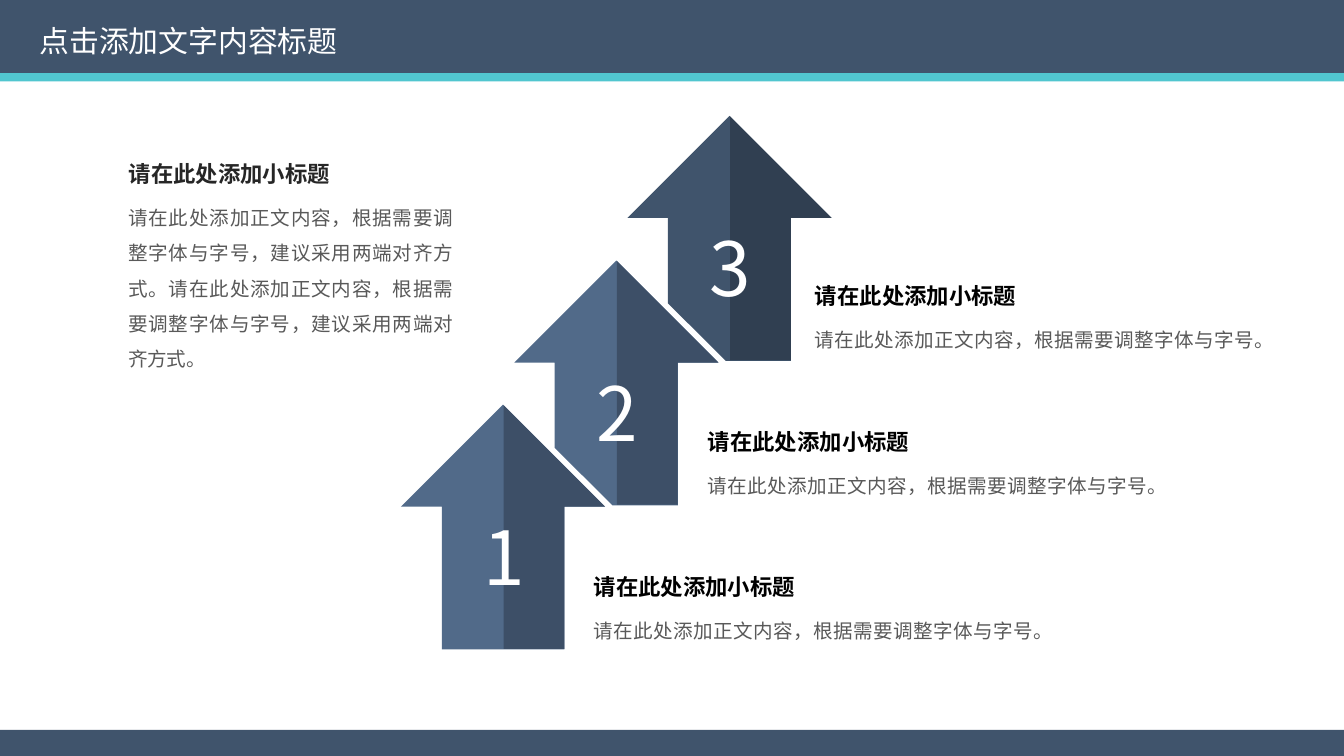
"""Build a slide of three rising arrows with captions."""
from dataclasses import dataclass

from lxml import etree
from pptx import Presentation
from pptx.dml.color import RGBColor
from pptx.enum.shapes import MSO_SHAPE
from pptx.enum.text import MSO_AUTO_SIZE, PP_ALIGN
from pptx.oxml.ns import qn
from pptx.util import Pt

RECT, ARROW = MSO_SHAPE.RECTANGLE, MSO_SHAPE.UP_ARROW
LEFT, CENTER, JUSTIFY = PP_ALIGN.LEFT, PP_ALIGN.CENTER, PP_ALIGN.JUSTIFY
GROW = MSO_AUTO_SIZE.SHAPE_TO_FIT_TEXT

FONT = "Noto Sans CJK SC"
HEX = {
    "slate": "40546C", "teal": "51C6CF", "night": "303F51",
    "blue": "516A89", "navy": "3D4F67", "white": "FFFFFF",
    "black": "000000", "ink": "262626", "gray": "595959",
}
HEAD = "请在此处添加小标题"
LINE = "请在此处添加正文内容，根据需要调整字体与字号"
LONG = f"{LINE}，建议采用两端对齐方式。" * 2

WIDE, TALL, TIP = 109.4, 131.2, 54.7
STEM, SIDE = 21.7, 87.6
NOTCHED = [(TIP, 0), (WIDE, TIP), (SIDE, TIP), (SIDE, TALL),
           (52.7, TALL), (STEM, 100.4), (STEM, TIP), (0, TIP)]
SHADE = [(55, 0.3), (WIDE, TIP), (SIDE, TIP), (SIDE, TALL - 0.4), (55, TALL - 0.4)]


@dataclass
class Step:
    label: str
    left: float
    top: float
    light: str
    dark: str
    note: tuple[float, float]
    notch: bool = True


@dataclass
class Band:
    top: float
    height: float
    color: str


BANDS = [Band(0, 39.4, "slate"), Band(39.2, 4.4, "teal"), Band(391, 14, "slate")]
STEPS = [
    Step("3", 336.1, 62.1, "slate", "night", (429.5, 147.4)),
    Step("2", 275.5, 139.6, "blue", "navy", (372.1, 225.6)),
    Step("1", 214.8, 216.8, "blue", "navy", (311, 303.5), notch=False),
]


def paint(shape, color: str) -> None:
    shape.shadow.inherit = False
    shape.fill.solid()
    shape.fill.fore_color.rgb = RGBColor.from_string(HEX[color])
    shape.line.fill.background()


def block(slide, kind, left: float, top: float, width: float, height: float, color: str):
    shape = slide.shapes.add_shape(kind, Pt(left), Pt(top), Pt(width), Pt(height))
    paint(shape, color)
    return shape


def outline(slide, points: list, left: float, top: float, color: str) -> None:
    spots = [(Pt(left + x), Pt(top + y)) for x, y in points]
    pen = slide.shapes.build_freeform(*spots[0])
    pen.add_line_segments(spots[1:], close=True)
    paint(pen.convert_to_shape(), color)


def write(slide, text: str, left: float, top: float, width: float, height: float, *,
          size: float, color: str, bold: bool = False, align=LEFT,
          space: float = 1, wrap: bool = True) -> None:
    box = slide.shapes.add_textbox(Pt(left), Pt(top), Pt(width), Pt(height))
    frame = box.text_frame
    frame.word_wrap = wrap
    frame.auto_size = GROW
    para = frame.paragraphs[0]
    para.alignment = align
    para.line_spacing = space
    run = para.add_run()
    run.text = text
    font = run.font
    font.name, font.size, font.bold = FONT, Pt(size), bold
    font.color.rgb = RGBColor.from_string(HEX[color])
    etree.SubElement(run._r.get_or_add_rPr(), qn("a:ea")).set("typeface", FONT)


def note(slide, left: float, top: float, body: str, width: float, height: float,
         color: str = "black") -> None:
    write(slide, HEAD, left, top, 165.6, 21.6, size=12, color=color, bold=True)
    write(slide, body, left - 0.4, top + 18.5, width, height,
          size=10.5, color="gray", align=JUSTIFY, space=1.5)


def climb(slide, step: Step) -> None:
    if step.notch:
        outline(slide, NOTCHED, step.left, step.top, step.light)
    else:
        arrow = block(slide, ARROW, step.left, step.top, WIDE, TALL, step.light)
        arrow.adjustments[0] = 0.6
        arrow.adjustments[1] = 0.5
    outline(slide, SHADE, step.left, step.top, step.dark)
    write(slide, step.label, step.left + 36, step.top + 53.3, 38.2, 55.2,
          size=40, color="white", align=CENTER, wrap=False)


def main() -> None:
    deck = Presentation()
    deck.slide_width, deck.slide_height = Pt(720), Pt(405)
    slide = deck.slides.add_slide(deck.slide_layouts[6])
    for band in BANDS:
        block(slide, RECT, 0, band.top, 720, band.height, band.color)
    for step in STEPS:
        climb(slide, step)
    for step in reversed(STEPS):
        note(slide, *step.note, f"{LINE}。", 250.6, 26.4)
    note(slide, 61.9, 82.1, LONG, 188.6, 102.6, color="ink")
    write(slide, "点击添加文字内容标题", 14.2, 8.6, 176.4, 26.6,
          size=16, color="white", wrap=False)
    deck.save("out.pptx")


if __name__ == "__main__":
    main()
